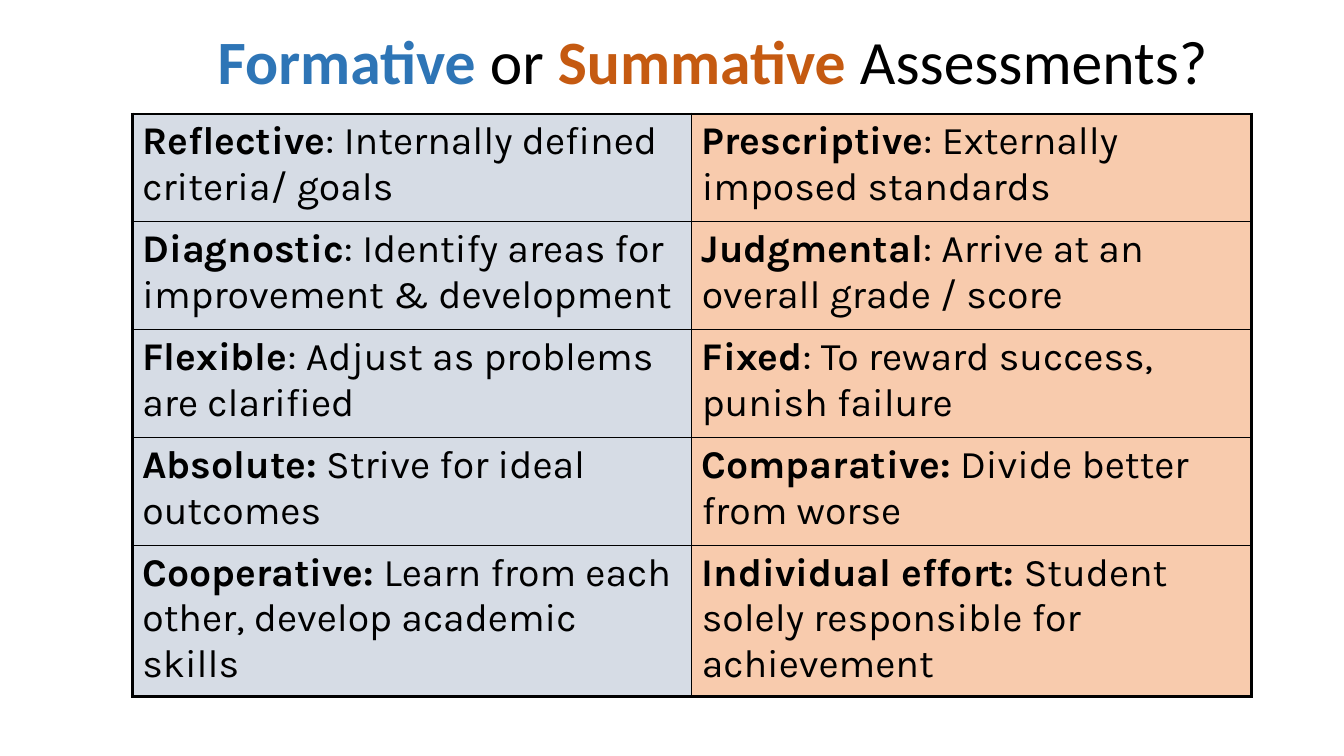
from dataclasses import dataclass

from lxml import etree
from pptx import Presentation
from pptx.dml.color import RGBColor
from pptx.enum.text import MSO_ANCHOR, PP_ALIGN
from pptx.oxml.ns import qn
from pptx.util import Pt

CENTER = PP_ALIGN.CENTER
LEFT = PP_ALIGN.LEFT
TOP = MSO_ANCHOR.TOP
BLANK_LAYOUT = 6


@dataclass(frozen=True)
class Theme:
    ink: str = "000000"
    formative: str = "2E75B6"
    summative: str = "C55A11"
    formative_fill: str = "D6DCE5"
    summative_fill: str = "F8CBAD"
    title_font: str = "Calibri"
    body_font: str = "Karla"
    title_size: float = 44
    body_size: float = 28
    frame_line: float = 2.25
    inner_line: float = 1


THEME = Theme()

TITLE = [
    ("Formative", True, THEME.formative),
    (" or ", False, THEME.ink),
    ("Summative", True, THEME.summative),
    (" Assessments?", False, THEME.ink),
]

# Each row pairs a formative trait with its summative counterpart.
TRAITS = [
    [("Reflective", ": Internally defined criteria/ goals"),
     ("Prescriptive", ": Externally imposed standards")],
    [("Diagnostic", ": Identify areas for improvement & development"),
     ("Judgmental", ": Arrive at an overall grade / score")],
    [("Flexible", ": Adjust as problems are clarified"),
     ("Fixed", ": To reward success, punish failure")],
    [("Absolute:", " Strive for ideal outcomes"),
     ("Comparative:", " Divide better from worse")],
    [("Cooperative:", " Learn from each other, develop academic skills"),
     ("Individual effort:", " Student solely responsible for achievement")],
]
ROW_HEIGHTS = [77, 77, 77, 77, 105]
COLUMN_WIDTH = 399.6


def add_run(paragraph, text, font, size, bold, color):
    run = paragraph.add_run()
    run.text = text
    run.font.name = font
    run.font.size = Pt(size)
    run.font.bold = bold
    run.font.color.rgb = RGBColor.from_string(color)


def add_title(slide):
    frame = slide.shapes.add_textbox(Pt(106.6), Pt(14.4), Pt(818), Pt(90)).text_frame
    frame.word_wrap = True
    frame.vertical_anchor = TOP
    frame.margin_top = Pt(7.6)
    frame.margin_right = Pt(20)
    heading = frame.paragraphs[0]
    heading.alignment = CENTER
    heading.line_spacing = 0.9
    for text, bold, color in TITLE:
        add_run(heading, text, THEME.title_font, THEME.title_size, bold, color)


def set_borders(cell, on_frame):
    """Draw the four cell edges, heavier where the edge lies on the table frame."""
    properties = cell._tc.get_or_add_tcPr()
    for position, (edge, outer) in enumerate(on_frame.items()):
        width = THEME.frame_line if outer else THEME.inner_line
        line = etree.Element(qn(f"a:{edge}"), w=str(Pt(width)))
        fill = etree.SubElement(line, qn("a:solidFill"))
        etree.SubElement(fill, qn("a:srgbClr"), val=THEME.ink)
        properties.insert(position, line)


def fill_cell(cell, trait, meaning, color):
    cell.fill.solid()
    cell.fill.fore_color.rgb = RGBColor.from_string(color)
    cell.vertical_anchor = TOP
    paragraph = cell.text_frame.paragraphs[0]
    paragraph.alignment = LEFT
    for text, bold in ((trait, True), (meaning, False)):
        add_run(paragraph, text, THEME.body_font, THEME.body_size, bold, THEME.ink)


def add_comparison(slide):
    fills = (THEME.formative_fill, THEME.summative_fill)
    last_row, last_column = len(TRAITS) - 1, len(fills) - 1
    table = slide.shapes.add_table(
        len(TRAITS), len(fills), Pt(94.5), Pt(81.4),
        Pt(COLUMN_WIDTH * len(fills)), Pt(sum(ROW_HEIGHTS))).table
    table.first_row = False
    table.horz_banding = False
    for column in table.columns:
        column.width = Pt(COLUMN_WIDTH)
    for r, (traits, height) in enumerate(zip(TRAITS, ROW_HEIGHTS)):
        table.rows[r].height = Pt(height)
        for c, ((trait, meaning), color) in enumerate(zip(traits, fills)):
            cell = table.cell(r, c)
            fill_cell(cell, trait, meaning, color)
            set_borders(cell, {"lnL": c == 0, "lnR": c == last_column,
                               "lnT": r == 0, "lnB": r == last_row})


def main():
    deck = Presentation()
    deck.slide_width, deck.slide_height = Pt(960), Pt(540)
    slide = deck.slides.add_slide(deck.slide_layouts[BLANK_LAYOUT])
    add_title(slide)
    add_comparison(slide)
    deck.save("out.pptx")


if __name__ == "__main__":
    main()
